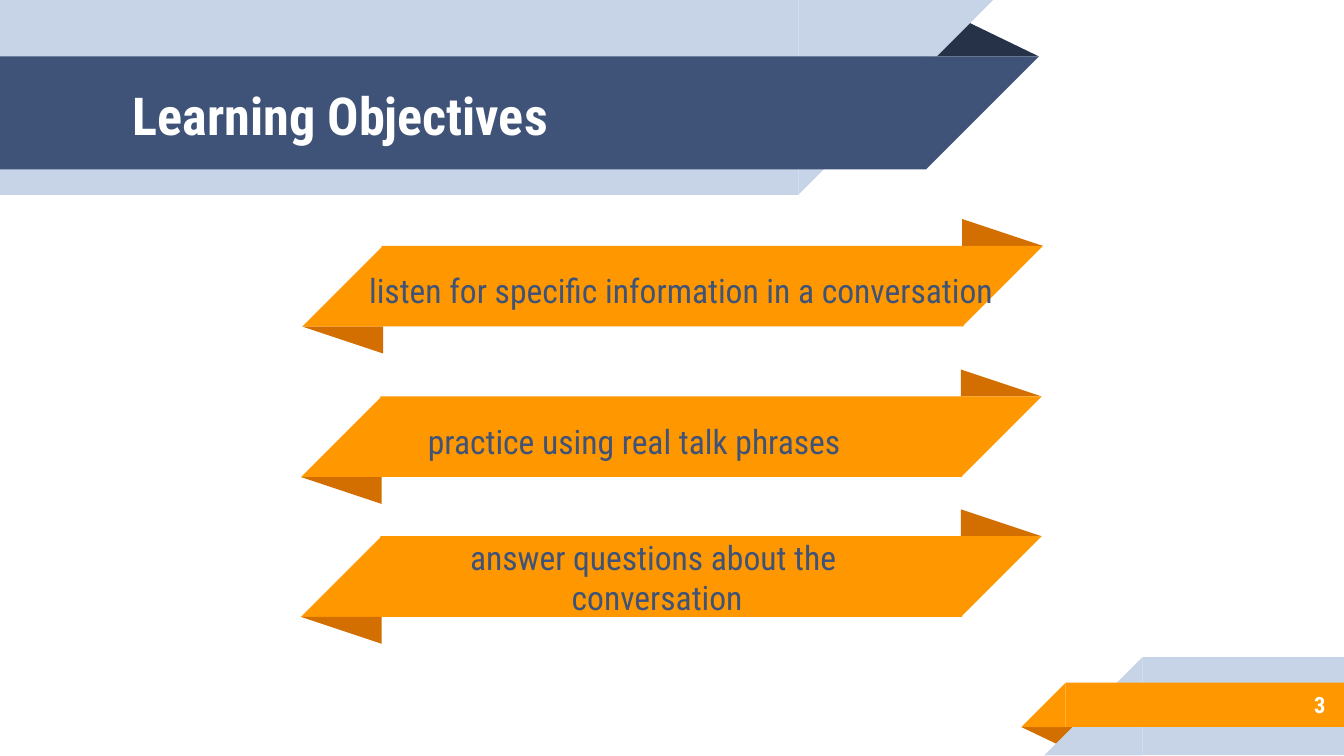
import pptx
import pptx.util
import pptx.dml.color
import pptx.enum.shapes
import pptx.enum.text

Inches = pptx.util.Inches
RGBColor = pptx.dml.color.RGBColor
Shape = pptx.enum.shapes.MSO_SHAPE
Align = pptx.enum.text.PP_ALIGN

NAVY = RGBColor(0x3F, 0x53, 0x78)
DARK_NAVY = RGBColor(0x26, 0x32, 0x48)
PALE_BLUE = RGBColor(0xC7, 0xD3, 0xE6)
ORANGE = RGBColor(0xFF, 0x98, 0x00)
DARK_ORANGE = RGBColor(0xD2, 0x6F, 0x00)
WHITE = RGBColor(0xFF, 0xFF, 0xFF)


def add_piece(group, kind, left, top, width, height, color, rotation=0, apex=None):
    piece = group.shapes.add_shape(
        kind, Inches(left), Inches(top), Inches(width), Inches(height))
    piece.shadow.inherit = False
    piece.fill.solid()
    piece.fill.fore_color.rgb = color
    piece.line.fill.background()
    piece.rotation = rotation
    if apex is not None:
        piece.adjustments[0] = apex


def add_text(page, text, left, top, width, height, size=18, color=NAVY,
             bold=False, align=Align.CENTER, before=0, after=0):
    box = page.shapes.add_textbox(
        Inches(left), Inches(top), Inches(width), Inches(height))
    frame = box.text_frame
    frame.word_wrap = True
    frame.vertical_anchor = pptx.enum.text.MSO_ANCHOR.MIDDLE
    frame.margin_left = frame.margin_right = Inches(0.1)
    frame.margin_top = frame.margin_bottom = Inches(0.1)
    para = frame.paragraphs[0]
    para.text = text
    para.alignment = align
    para.space_before = pptx.util.Pt(before)
    para.space_after = pptx.util.Pt(after)
    for span in para.runs:
        span.font.name = "Roboto Condensed"
        span.font.size = pptx.util.Pt(size)
        span.font.bold = bold
        span.font.color.rgb = color


deck = pptx.Presentation()
deck.slide_width = Inches(10)
deck.slide_height = deck.slide_width * 9 // 16
page = deck.slides.add_slide(deck.slide_layouts[6])

header = page.shapes.add_group_shape()
add_piece(header, Shape.ISOSCELES_TRIANGLE, 6.88, 0.14, 0.85, 0.28, DARK_NAVY, apex=0.32)
for top, width, height, color in [(0, 5.94, 1.45, PALE_BLUE), (0.42, 6.89, 0.84, NAVY)]:
    add_piece(header, Shape.RECTANGLE, 0, top, width, height, color)
    add_piece(header, Shape.RIGHT_TRIANGLE, width, top, height, height, color, rotation=90)

footer = page.shapes.add_group_shape()
add_piece(footer, Shape.ISOSCELES_TRIANGLE, 7.6, 5.41, 0.43, 0.14, DARK_ORANGE,
          rotation=180, apex=0.32)
for left, top, height, color in [(8.5, 4.89, 0.73, PALE_BLUE), (7.93, 5.08, 0.33, ORANGE)]:
    add_piece(footer, Shape.RECTANGLE, left, top, 10 - left, height, color)
    add_piece(footer, Shape.RIGHT_TRIANGLE, left - height, top, height, height, color,
              rotation=270)

END = 0.6
FOLD = 0.2
BAND = 4.33
objectives = [
    (2.25, 1.83, "listen for specific information in a conversation", 2.58, 1.93, 4.98),
    (2.24, 2.95, "practice using real talk phrases", 2.58, 3.06, 4.28),
    (2.24, 3.99, "answer questions about the \vconversation", 2.75, 4.07, 4.28),
]
for left, top, text, text_left, text_top, text_width in objectives:
    ribbon = page.shapes.add_group_shape()
    right = left + 4.91
    add_piece(ribbon, Shape.ISOSCELES_TRIANGLE, right, top - FOLD, END, FOLD,
              DARK_ORANGE, apex=0)
    add_piece(ribbon, Shape.RECTANGLE, left + 0.59, top, BAND, END, ORANGE)
    add_piece(ribbon, Shape.RIGHT_TRIANGLE, right, top, END, END, ORANGE, rotation=90)
    add_piece(ribbon, Shape.RIGHT_TRIANGLE, left, top, END, END, ORANGE, rotation=270)
    add_piece(ribbon, Shape.ISOSCELES_TRIANGLE, left, top + END, END, FOLD,
              DARK_ORANGE, rotation=180, apex=0)
    add_text(page, text, text_left, text_top, text_width, 0.45, before=6, after=10)

add_text(page, "Learning Objectives", 0.89, 0.43, 3.72, 0.84,
         size=28, color=WHITE, bold=True, align=Align.LEFT)
add_text(page, "3", 8.33, 5.07, 1.63, 0.35,
         size=12, color=WHITE, bold=True, align=Align.RIGHT)

deck.save("out.pptx")
